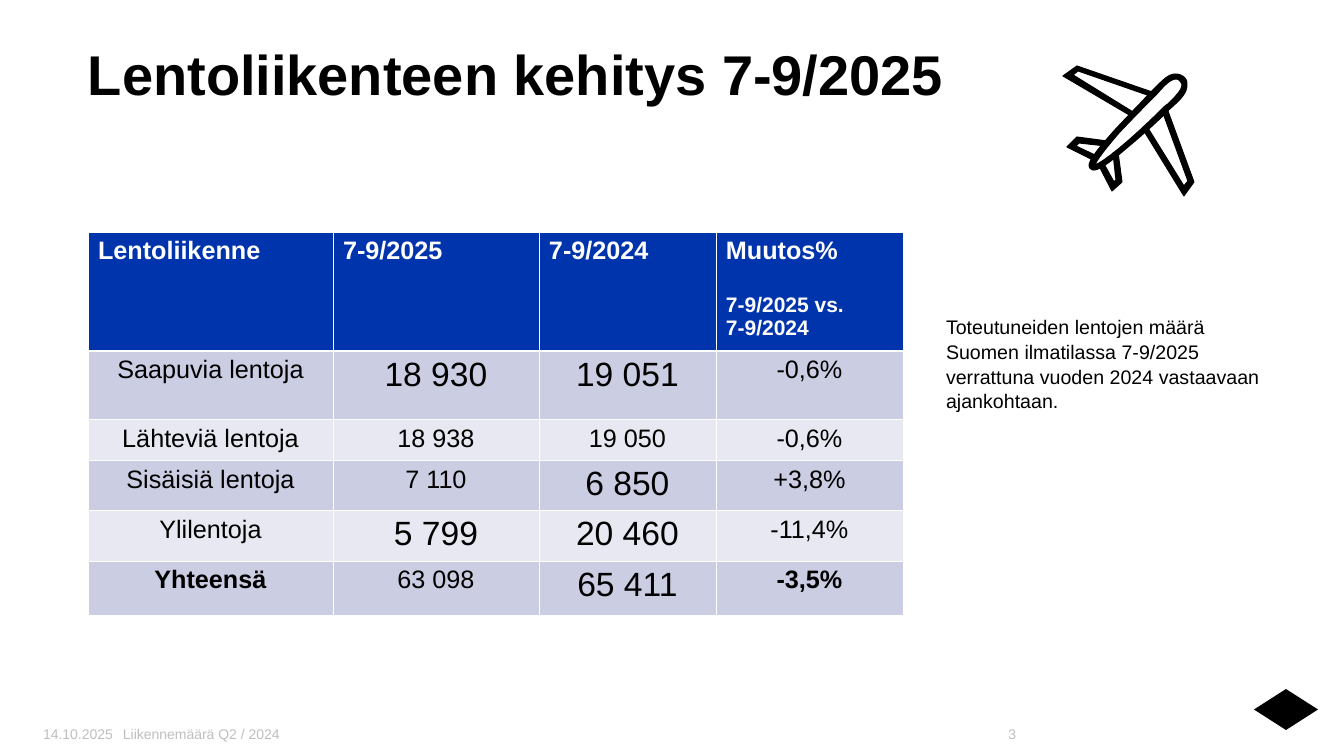
"""Build a slide on air traffic figures for July to September 2025."""
import dataclasses

import pptx
import pptx.dml.color
import pptx.enum.shapes
import pptx.enum.text
import pptx.oxml
import pptx.oxml.ns
import pptx.util

PX = 12192000 / 1344
ALIGN = pptx.enum.text.PP_ALIGN
ANCHOR = pptx.enum.text.MSO_ANCHOR


@dataclasses.dataclass(frozen=True)
class Theme:
    font: str = "Arial"
    black: str = "000000"
    white: str = "FFFFFF"
    blue: str = "0034AC"
    dark: str = "CBCDE3"
    light: str = "E7E8F1"
    grey: str = "BFBFBF"
    title: int = 40
    big: int = 24
    body: int = 18
    sub: int = 15
    note: int = 14
    foot: int = 10
    thin: float = 0.6
    thick: float = 1.53


THEME = Theme()

COLS = [245, 206, 177, 187]
HEIGHTS = [118, 69, 40, 43, 39, 54]
HEAD = ["Lentoliikenne", "7-9/2025", "7-9/2024", "Muutos%"]
SPAN = "7-9/2025 vs.\v7-9/2024"
ROWS = [
    ["Saapuvia lentoja", "18 930", "19 051", "-0,6%"],
    ["Lähteviä lentoja", "18 938", "19 050", "-0,6%"],
    ["Sisäisiä lentoja", "7 110", "6 850", "+3,8%"],
    ["Ylilentoja", "5 799", "20 460", "-11,4%"],
    ["Yhteensä", "63 098", "65 411", "-3,5%"],
]
BIG = {(1, 1), (1, 2), (3, 2), (4, 1), (4, 2), (5, 2)}
BOLD = {(5, 0), (5, 3)}

HULL = [
    (1094, 170), (1093, 170), (1092, 170), (1091, 169),
    (1087, 166), (1087, 161), (1113, 132),
    (1123, 121), (1135, 109), (1149, 94),
    (1150, 93), (1152, 91), (1153, 90),
    (1161, 82), (1168, 74), (1175, 74),
    (1179, 74), (1181, 75), (1184, 77),
    (1187, 80), (1187, 82), (1187, 85),
    (1187, 93), (1181, 99), (1171, 108),
    (1170, 109), (1168, 110), (1167, 112),
    (1162, 117), (1145, 133), (1128, 147),
    (1106, 166), (1098, 170), (1094, 170),
]
HOLE = [
    (1153, 98), (1148, 103), (1133, 118), (1119, 133),
    (1100, 155), (1096, 162), (1095, 165),
    (1102, 163), (1129, 142), (1163, 108),
    (1164, 107), (1166, 105), (1168, 104),
    (1175, 97), (1182, 90), (1182, 85),
    (1182, 84), (1181, 82), (1180, 81),
    (1179, 80), (1178, 79), (1176, 79),
    (1170, 79), (1163, 87), (1157, 94),
    (1156, 95), (1155, 96), (1153, 98),
]
WINGS = [
    [(1095, 161), (1067, 147), (1077, 137), (1107, 141),
     (1106, 146), (1079, 143), (1076, 146), (1097, 156)],
    [(1112, 191), (1098, 164), (1103, 162), (1114, 182),
     (1116, 180), (1113, 153), (1118, 152), (1122, 182)],
    [(1184, 196), (1144, 131), (1148, 128), (1184, 186),
     (1188, 181), (1163, 113), (1168, 111), (1194, 182)],
    [(1131, 116), (1063, 76), (1077, 66), (1152, 92),
     (1150, 96), (1078, 71), (1073, 75), (1133, 112)],
]


def emu(*sizes):
    """Turn px lengths into EMU."""
    return [round(size * PX) for size in sizes]


def rgb(code):
    """Return the colour for a hex code."""
    return pptx.dml.color.RGBColor.from_string(code)


def apply(item, values):
    """Set each format value on an object."""
    for name, value in values.items():
        setattr(item, name, value)


def paint(shape, line=None):
    """Fill a shape in black, with an outline if a width is given."""
    shape.shadow.inherit = False
    shape.fill.solid()
    shape.fill.fore_color.rgb = rgb(THEME.black)
    if line:
        shape.line.color.rgb = rgb(THEME.black)
        shape.line.width = pptx.util.Pt(line)
    else:
        shape.line.fill.background()


def write(frame, texts, sizes, color, bold=False, **form):
    """Write one paragraph for each text."""
    for i, (text, size) in enumerate(zip(texts, sizes)):
        para = frame.add_paragraph() if i else frame.paragraphs[0]
        para.text = text
        apply(para, form)
        for run in para.runs:
            apply(run.font, {"name": THEME.font, "bold": bold,
                             "size": pptx.util.Pt(size)})
            run.font.color.rgb = rgb(color)


def label(slide, box, texts, size, color, pads=(10, 5, 10, 5),
          anchor=ANCHOR.TOP, **form):
    """Add a text box."""
    frame = slide.shapes.add_textbox(*emu(*box)).text_frame
    sides = ["margin_left", "margin_top", "margin_right", "margin_bottom"]
    apply(frame, {"word_wrap": True, "vertical_anchor": anchor,
                  **dict(zip(sides, emu(*pads)))})
    write(frame, texts, [size] * len(texts), color, **form)


def edge(cell, widths):
    """Draw white borders round a cell."""
    props = cell._tc.get_or_add_tcPr()
    for i, (side, width) in enumerate(widths.items()):
        props.insert(i, pptx.oxml.parse_xml(
            f'<a:ln{side} {pptx.oxml.ns.nsdecls("a")} w="{round(width * 12700)}">'
            f'<a:solidFill><a:srgbClr val="{THEME.white}"/></a:solidFill>'
            f'</a:ln{side}>'))


def grid(slide):
    """Add the table of flights."""
    box = emu(88, 232, sum(COLS), sum(HEIGHTS))
    table = slide.shapes.add_table(len(HEIGHTS), len(COLS), *box).table
    for col, width in zip(table.columns, emu(*COLS)):
        col.width = width
    for row, height in zip(table.rows, emu(*HEIGHTS)):
        row.height = height
    for r, texts in enumerate([HEAD] + ROWS):
        for c, text in enumerate(texts):
            cell = table.cell(r, c)
            tint = THEME.dark if r % 2 else THEME.light
            cell.fill.solid()
            cell.fill.fore_color.rgb = rgb(tint if r else THEME.blue)
            edge(cell, {"L": THEME.thin, "R": THEME.thin,
                        "T": THEME.thick if r == 1 else THEME.thin,
                        "B": THEME.thin if r else THEME.thick})
            if r:
                size = THEME.big if (r, c) in BIG else THEME.body
                write(cell.text_frame, [text], [size], THEME.black,
                      (r, c) in BOLD, alignment=ALIGN.CENTER)
            else:
                lines = [text, SPAN] if c == 3 else [text]
                write(cell.text_frame, lines, [THEME.body, THEME.sub],
                      THEME.white, True)
    table.cell(0, 3).text_frame.paragraphs[0].space_after = pptx.util.Pt(20)


def curve(knots, steps=8):
    """Return points along a chain of cubic curves."""
    points = [knots[0]]
    for i in range(0, len(knots) - 1, 3):
        for step in range(1, steps + 1):
            t = step / steps
            parts = ((1 - t) ** 3, 3 * t * (1 - t) ** 2, 3 * t * t * (1 - t), t ** 3)
            points.append(tuple(sum(p * k[axis] for p, k in zip(parts, knots[i:i + 4]))
                                for axis in (0, 1)))
    return points


def outline(slide, *loops):
    """Add a black outline made of closed loops."""
    loops = [[emu(*point) for point in loop] for loop in loops]
    pen = slide.shapes.build_freeform(*loops[0][0])
    for i, loop in enumerate(loops):
        if i:
            pen.move_to(*loop[0])
        pen.add_line_segments(loop[1:], close=True)
    paint(pen.convert_to_shape(), 0.75)


def plane(slide):
    """Draw the plane."""
    outline(slide, curve(HULL), curve(HOLE))
    for wing in WINGS:
        outline(slide, wing)


def main():
    """Build and save the slide."""
    deck = pptx.Presentation()
    deck.slide_width, deck.slide_height = emu(1344, 756)
    slide = deck.slides.add_slide(deck.slide_layouts[6])
    paint(slide.shapes.add_shape(pptx.enum.shapes.MSO_SHAPE.DIAMOND,
                                 *emu(1254, 689, 64, 41)))
    label(slide, (88, 39, 1159, 123), ["Lentoliikenteen kehitys 7-9/2025"],
          THEME.title, THEME.black, (0, 0, 10, 5), bold=True)
    grid(slide)
    feet = [(43, 91, "14.10.2025", (0, 5, 10, 5), ALIGN.LEFT),
            (113, 804, "Liikennemäärä Q2 / 2024", (10, 5, 0, 5), ALIGN.LEFT),
            (921, 105, "3", (0, 5, 10, 5), ALIGN.RIGHT)]
    for left, width, text, pads, side in feet:
        label(slide, (left, 721, width, 26), [text], THEME.foot, THEME.grey,
              pads, ANCHOR.MIDDLE, alignment=side)
    label(slide, (936, 309, 385, 152),
          ["Toteutuneiden lentojen määrä", "Suomen ilmatilassa 7-9/2025",
           "verrattuna vuoden 2024 vastaavaan ajankohtaan."],
          THEME.note, THEME.black, line_spacing=1.05)
    plane(slide)
    deck.save("out.pptx")


if __name__ == "__main__":
    main()
